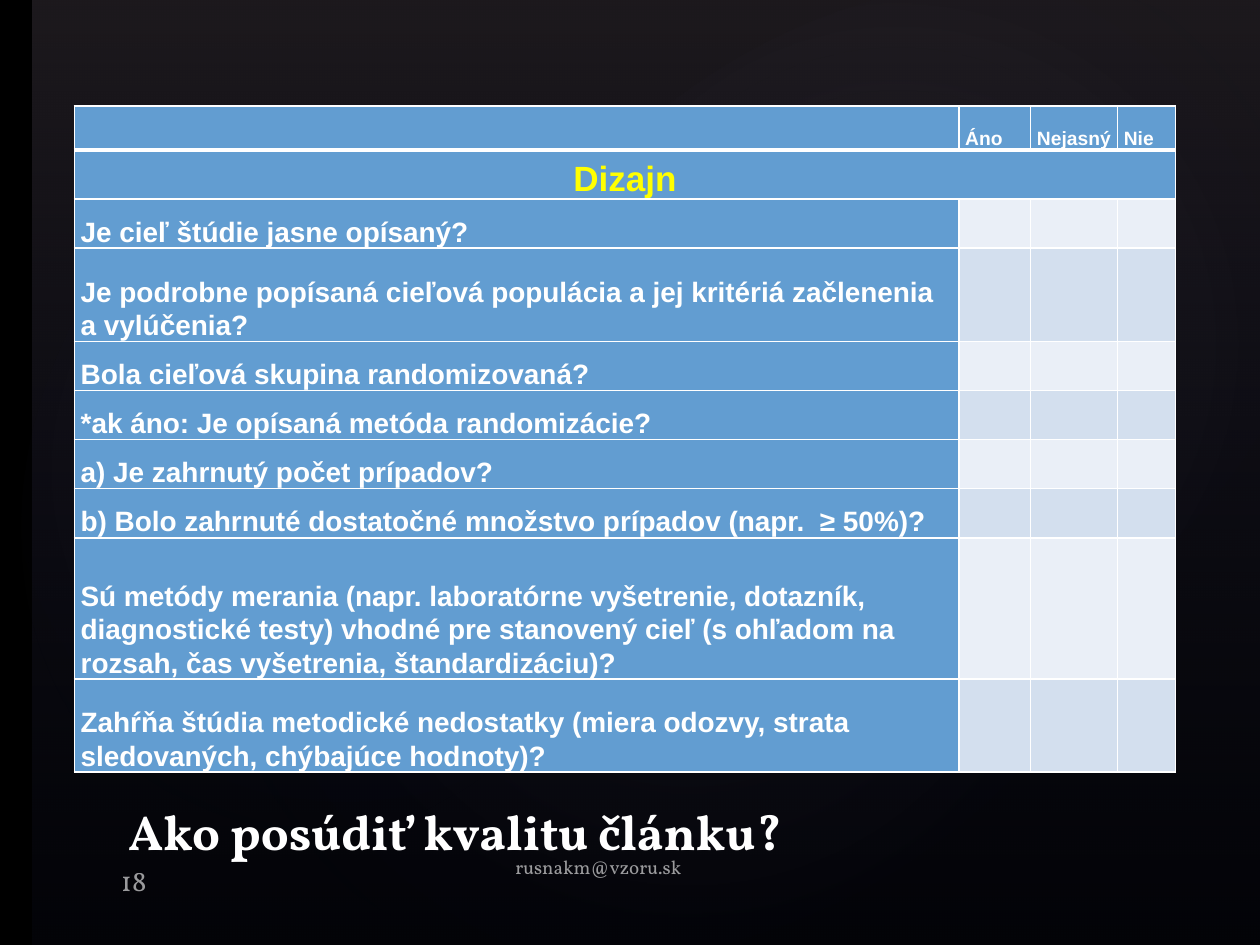
from lxml import etree
from pptx import Presentation
from pptx.dml.color import RGBColor
from pptx.enum.shapes import MSO_SHAPE
from pptx.enum.text import MSO_ANCHOR, MSO_AUTO_SIZE, PP_ALIGN
from pptx.oxml import parse_xml
from pptx.oxml.ns import nsdecls, qn
from pptx.util import Inches, Pt

RECT, OVAL = MSO_SHAPE.RECTANGLE, MSO_SHAPE.OVAL
TOP, BOTTOM = MSO_ANCHOR.TOP, MSO_ANCHOR.BOTTOM
LEFT, CENTER = PP_ALIGN.LEFT, PP_ALIGN.CENTER

BLACK = RGBColor(0x00, 0x00, 0x00)
WHITE = RGBColor(0xFF, 0xFF, 0xFF)
YELLOW = RGBColor(0xFF, 0xFF, 0x00)
BLUE = RGBColor(0x62, 0x9D, 0xD1)
BAND_LIGHT = RGBColor(0xEA, 0xEF, 0xF7)
BAND_DARK = RGBColor(0xD3, 0xDF, 0xEE)
MAUVE_DARK = RGBColor(0x50, 0x46, 0x52)
MAUVE = RGBColor(0xC4, 0xBC, 0xC6)
NAVY = RGBColor(0x24, 0x28, 0x52)

LINEAR = '<a:lin ang="5400000" scaled="0"/>'
RADIAL = ('<a:path path="circle"><a:fillToRect l="50000" t="50000" '
          'r="50000" b="50000"/></a:path>')

# Backdrop glows: left, top, width, height, rotation, opacity of the centre
GLOWS = [
    (1.5, 1.14, 7.92, 6.24, 328.7, 7),
    (-0.3, 1.28, 6.06, 4.9, 294.3, 8),
    (3.58, 0.13, 7.09, 5.2, 328.7, 8),
]

ANSWERS = ["Áno", "Nejasný", "Nie"]
SECTION = "Dizajn"
# Question and row height
QUESTIONS = [
    ("Je cieľ štúdie jasne opísaný?", 0.39),
    ("Je podrobne popísaná cieľová populácia a jej kritériá začlenenia "
     "a vylúčenia?", 0.74),
    ("Bola cieľová skupina randomizovaná?", 0.39),
    ("*ak áno: Je opísaná metóda randomizácie?", 0.39),
    ("a) Je zahrnutý počet prípadov?", 0.39),
    ("b) Bolo zahrnuté dostatočné množstvo prípadov (napr.  ≥ 50%)?", 0.39),
    ("Sú metódy merania (napr. laboratórne vyšetrenie, dotazník, "
     "diagnostické testy) vhodné pre stanovený cieľ (s ohľadom na rozsah, "
     "čas vyšetrenia, štandardizáciu)?", 1.12),
    ("Zahŕňa štúdia metodické nedostatky (miera odozvy, strata "
     "sledovaných, chýbajúce hodnoty)?", 0.74),
]
COL_WIDTHS = [7.02, 0.57, 0.69, 0.46]
ROW_HEIGHTS = [0.35, 0.39] + [height for _, height in QUESTIONS]


class Deck:
    """Holds the fonts and the current slide."""
    serif, sans = "Vollkorn", "Arial"

    def __init__(self, prs):
        self.s = prs.slides.add_slide(prs.slide_layouts[5])
        fill = self.s.background.fill
        fill.solid()
        fill.fore_color.rgb = BLACK

    def font(self, p, name, size, color, bold=False):
        for r in p.runs:
            f = r.font
            f.name, f.size, f.bold = name, Pt(size), bold
            f.color.rgb = color

    def gradient(self, kind, box, stops, direction, rotation=0):
        sp = self.s.shapes.add_shape(kind, *map(Inches, box))
        sp.shadow.inherit = False
        sp.line.fill.background()
        sp.rotation = rotation
        marks = "".join(
            f'<a:gs pos="{pos * 1000}"><a:srgbClr val="{color}">'
            f'<a:alpha val="{alpha * 1000}"/></a:srgbClr></a:gs>'
            for pos, color, alpha in stops)
        grad = parse_xml(f'<a:gradFill {nsdecls("a")} rotWithShape="1">'
                         f'<a:gsLst>{marks}</a:gsLst>{direction}</a:gradFill>')
        sp.element.spPr.find(qn("a:prstGeom")).addnext(grad)

    def label(self, sp, text, size, anchor, bottom=0.06, bold=False):
        tf = sp.text_frame
        tf.text = text
        tf.word_wrap = True
        tf.auto_size = MSO_AUTO_SIZE.NONE
        tf.vertical_anchor = anchor
        tf.margin_left = tf.margin_right = Inches(0.11)
        tf.margin_top, tf.margin_bottom = Inches(0.06), Inches(bottom)
        p = tf.paragraphs[0]
        p.alignment = LEFT
        self.font(p, self.serif, size, WHITE, bold)

    def title(self, box, text, size):
        sp = self.s.shapes.title
        sp.left, sp.top, sp.width, sp.height = map(Inches, box)
        self.label(sp, text, size, BOTTOM, bold=True)
        sp.element.getparent().append(sp.element)  # in front of the backdrop

    def footer(self, box, text, size, anchor, bottom=0.06):
        sp = self.s.shapes.add_textbox(*map(Inches, box))
        self.label(sp, text, size, anchor, bottom)
        for color in sp.element.iter(qn("a:srgbClr")):
            etree.SubElement(color, qn("a:alpha")).set("val", "60000")

    def table(self, left, top, widths, heights):
        box = (left, top, sum(widths), sum(heights))
        table = self.s.shapes.add_table(len(heights), len(widths),
                                        *map(Inches, box)).table
        table.first_row = table.horz_banding = False
        for col, width in zip(table.columns, widths):
            col.width = Inches(width)
        for row, height in zip(table.rows, heights):
            row.height = Inches(height)
        return table

    def cell(self, cell, fill, text="", size=16, color=WHITE, align=LEFT,
             top=1, bottom=1):
        cell.margin_left = cell.margin_right = Inches(0.05)
        cell.margin_top = cell.margin_bottom = 0
        cell.vertical_anchor = BOTTOM
        tcPr = cell._tc.get_or_add_tcPr()
        for side, width in zip("LRTB", (1, 1, top, bottom)):
            tcPr.append(parse_xml(
                f'<a:ln{side} {nsdecls("a")} w="{Pt(width)}"><a:solidFill>'
                f'<a:srgbClr val="{WHITE}"/></a:solidFill></a:ln{side}>'))
        cell.fill.solid()
        cell.fill.fore_color.rgb = fill
        if text:
            cell.text = text
            p = cell.text_frame.paragraphs[0]
            p.alignment, p.line_spacing, p.space_after = align, 1.07, Pt(8)
            self.font(p, self.sans, size, color, bold=True)


def main():
    prs = Presentation()
    prs.slide_width, prs.slide_height = Inches(10), Inches(7.5)
    deck = Deck(prs)

    # Backdrop
    deck.gradient(RECT, (0.26, 0, 10, 7.5),
                  [(0, MAUVE_DARK, 36), (100, NAVY, 10)], LINEAR)
    for *box, rotation, alpha in GLOWS:
        deck.gradient(OVAL, box, [(0, MAUVE, alpha), (58, NAVY, 0)],
                      RADIAL, rotation)

    # Title and footer
    deck.title((0.91, 5.89, 8.25, 1), "Ako posúdiť kvalitu článku?", 28)
    deck.footer((0.85, 6.79, 0.82, 0.34), "18", 16.3, BOTTOM, bottom=0.01)
    deck.footer((3.98, 6.73, 2.23, 0.4), "rusnakm@vzoru.sk", 10.9, TOP)

    # Checklist: header row, section row, then the questions
    table = deck.table(0.59, 0.84, COL_WIDTHS, ROW_HEIGHTS)
    for c, answer in enumerate([""] + ANSWERS):
        deck.cell(table.cell(0, c), BLUE, answer, size=11, bottom=3)
        deck.cell(table.cell(1, c), BLUE, "" if c else SECTION, size=20,
                  color=YELLOW, align=CENTER, top=3)
    table.cell(1, 0).merge(table.cell(1, len(ANSWERS)))
    for i, (question, _) in enumerate(QUESTIONS):
        deck.cell(table.cell(i + 2, 0), BLUE, question)
        band = BAND_DARK if i % 2 else BAND_LIGHT
        for c in range(1, len(COL_WIDTHS)):
            deck.cell(table.cell(i + 2, c), band)

    prs.save("out.pptx")


if __name__ == "__main__":
    main()
